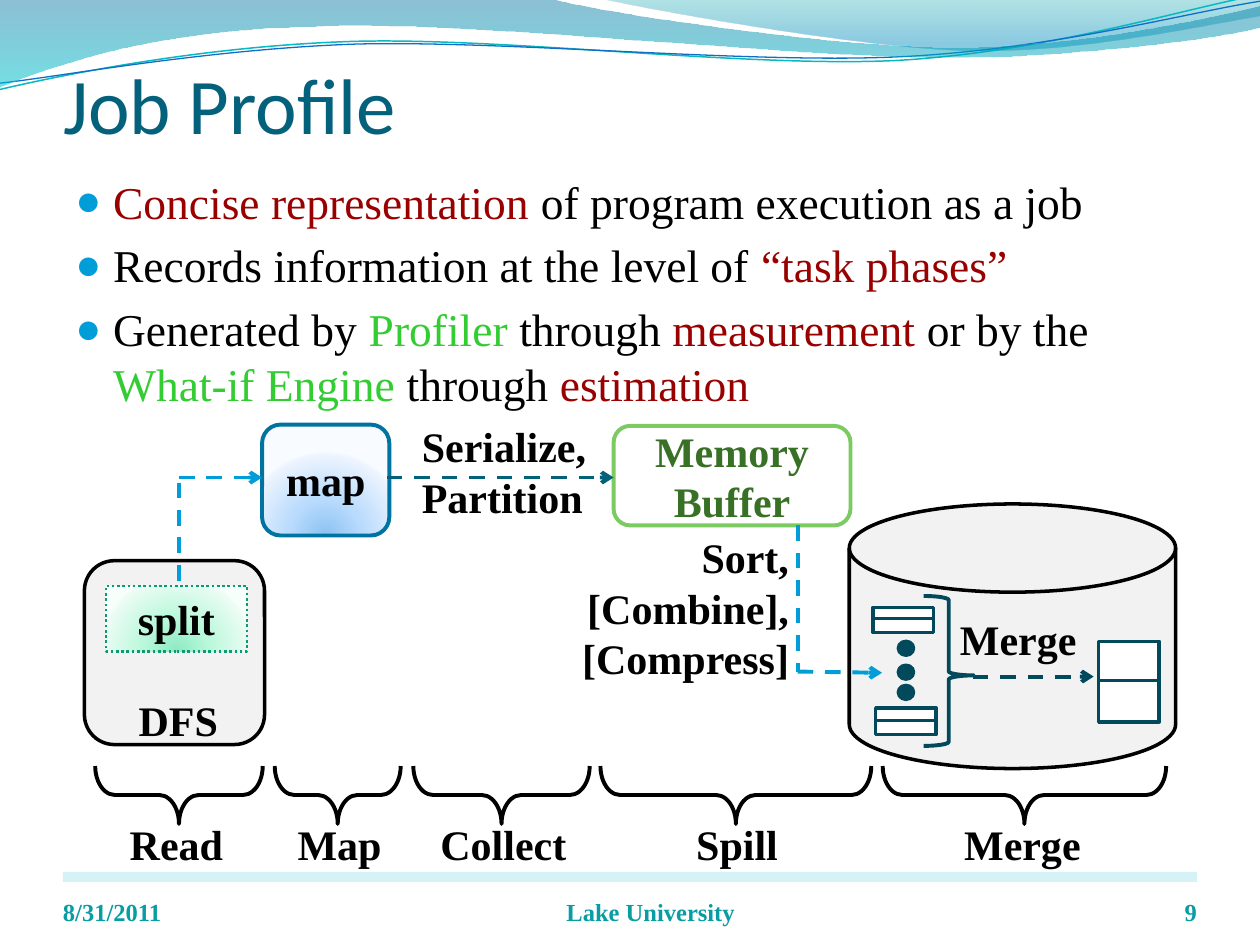
from dataclasses import dataclass
from typing import NamedTuple, Optional
from lxml import etree
from pptx import Presentation
from pptx.dml.color import RGBColor
from pptx.enum import dml, shapes, text
from pptx.oxml.ns import qn
from pptx.util import Inches, Pt

@dataclass(frozen=True)
class Theme:
    serif: str = "Times New Roman"
    sans: str = "Calibri"
    black: str = "000000"
    white: str = "FFFFFF"
    grey: str = "F2F2F2"
    title: str = "04617B"
    bullet: str = "009DD9"
    red: str = "990000"
    green: str = "33CC33"
    footer: str = "089CA3"
    navy: str = "03495C"
    blue: str = "0074A1"
    title_size: float = 45
    body_size: float = 26
    label_size: float = 24
    footer_size: float = 14

class Stroke(NamedTuple):
    color: str
    width: float = 2
    dash: Optional[dml.MSO_LINE] = None

class Label(NamedTuple):
    text: str
    box: tuple
    align: text.PP_ALIGN = text.PP_ALIGN.CENTER

class Arrow(NamedTuple):
    ends: tuple
    color: str
    head: bool = True

class Phase(NamedTuple):
    name: str
    center: float
    span: float
    label_left: float
    label_width: float

class Wave(NamedTuple):
    points: tuple
    kinds: str
    stops: tuple = ()
    stroke: Optional[Stroke] = None

THEME, SHAPE, ALIGN, ANCHOR = Theme(), shapes.MSO_SHAPE, text.PP_ALIGN, text.MSO_ANCHOR
BLUE_GLOW = ((0, "8BC2F1", 100), (43, "B9DBFD", 100), (93, "EAF3FE", 100), (100, "F8FBFF", 100))
GREEN_GLOW = ((0, "8DEAC2", 100), (43, "BAF8DB", 100), (93, "EAFCF3", 100), (100, "F7FFFB", 100))
WAVES = [
    Wave(((4.79, 0), (5.09, 0.07), (6.82, 0.38), (7.69, 0.4), (8.56, 0.42), (9.61, 0.19), (10, 0.13), (10, 0)),
         "CCL", ((0, "00A1A9", 30), (80, "008BBF", 45))),
    Wave(((0, 0.71), (0.47, 0.6), (1.58, 0.37), (2.77, 0.33), (3.96, 0.29), (5.92, 0.54), (7.12, 0.48),
          (8.32, 0.41), (9.39, 0.07), (9.99, -0.04)), "CCC", stroke=Stroke("0AB8BF", 0.85)),
    Wave(((0, 0.66), (0.47, 0.61), (1.64, 0.39), (2.83, 0.35), (4.03, 0.32), (5.97, 0.51), (7.16, 0.45),
          (8.36, 0.39), (9.42, 0.1), (10, 0.01)), "CCC", stroke=Stroke("0F6FC6", 0.75)),
    Wave(((0, 0), (4.4, 0), (4.76, 0.1), (6.64, 0.38), (7.58, 0.38), (8.53, 0.38), (9.58, 0.15), (10, 0.05),
          (10, 0.22), (9.83, 0.27), (8.7, 0.46), (7.46, 0.46), (6.22, 0.46), (3.82, 0.17), (2.57, 0.21),
          (1.29, 0.22), (0.46, 0.51), (0, 0.69)), "LCCLCCC", ((0, "0074A1", 45), (100, "00C6CF", 55))),
]
BULLETS = [
    [("Concise representation ", THEME.red), ("of program execution as a job", THEME.black)],
    [("Records information at the level of ", THEME.black), ("“task phases”", THEME.red)],
    [("Generated by ", THEME.black), ("Profiler", THEME.green), (" through ", THEME.black),
     ("measurement", THEME.red), (" or by the ", THEME.black), ("What-if Engine ", THEME.green),
     ("through ", THEME.black), ("estimation", THEME.red)],
]
FOOTERS = [Label("8/31/2011", (0.5, 6.95, 2.33, 0.4), ALIGN.LEFT),
           Label("Lake University", (3.33, 6.95, 3.67, 0.4)),
           Label("9", (8.67, 6.95, 0.83, 0.4), ALIGN.RIGHT)]
LABELS = [Label("Merge", (7.52, 4.82, 1.29, 0.47), ALIGN.LEFT),
          Label("Sort,\n[Combine],\n[Compress]", (4.17, 4.17, 2.19, 1.22), ALIGN.RIGHT),
          Label("Serialize,\nPartition", (3.25, 3.29, 1.67, 0.85), ALIGN.LEFT),
          Label("DFS", (0.77, 5.46, 1.29, 0.47))]
ARROWS = [Arrow((3.07, 3.79, 4.87, 3.79), THEME.title), Arrow((7.72, 5.37, 8.68, 5.37), THEME.navy),
          Arrow((6.33, 4.17, 6.33, 5.33), THEME.bullet, False), Arrow((6.33, 5.33, 7, 5.34), THEME.bullet),
          Arrow((1.42, 3.83, 1.42, 4.65), THEME.bullet, False), Arrow((1.42, 3.79, 2.08, 3.79), THEME.bullet)]
PHASES = [Phase("Read", 1.42, 1.33, 0.75, 1.3), Phase("Map", 2.68, 1, 2.18, 1.03),
          Phase("Collect", 3.98, 1.4, 3.27, 1.45), Phase("Spill", 5.84, 2.15, 4.92, 1.86),
          Phase("Merge", 8.13, 2.25, 7.08, 2.07)]

def add_node(parent, tag: str, **attributes):
    return etree.SubElement(parent, qn(tag), {key: str(value) for key, value in attributes.items()})

def style_font(font, size: float, color: str, bold: bool = False, name: str = THEME.serif) -> None:
    font.name, font.size, font.bold = name, Pt(size), bold
    font.color.rgb = RGBColor.from_string(color)

def paint(shape, fill=None, stroke: Optional[Stroke] = None, radial: bool = False) -> None:
    shape.shadow.inherit = False
    shape.fill.background()
    if isinstance(fill, str):
        shape.fill.solid()
        shape.fill.fore_color.rgb = RGBColor.from_string(fill)
    elif fill:
        properties = shape._element.spPr
        empty = properties.find(qn("a:noFill"))
        gradient = add_node(properties, "a:gradFill", rotWithShape=1)
        stop_list = add_node(gradient, "a:gsLst")
        for position, color, alpha in fill:
            node = add_node(add_node(stop_list, "a:gs", pos=position * 1000), "a:srgbClr", val=color)
            add_node(node, "a:alpha", val=alpha * 1000)
        if radial:
            circle = add_node(gradient, "a:path", path="circle")
            add_node(circle, "a:fillToRect", l=50000, t=130000, r=50000, b=-30000)
        else:
            add_node(gradient, "a:lin", ang=5400000, scaled=0)
        properties.replace(empty, gradient)
    if not stroke:
        shape.line.fill.background()
        return
    shape.line.color.rgb = RGBColor.from_string(stroke.color)
    shape.line.width = Pt(stroke.width)
    if stroke.dash:
        shape.line.dash_style = stroke.dash

def write(shape, words: str, size: float, color: str, align=ALIGN.CENTER, anchor=ANCHOR.MIDDLE):
    frame = shape.text_frame
    frame.text, frame.word_wrap, frame.vertical_anchor = words, True, anchor
    for paragraph in frame.paragraphs:
        paragraph.alignment = align
        style_font(paragraph.runs[0].font, size, color, True)
    return frame

def add_shape(slide, kind, box: tuple, fill=None, stroke: Optional[Stroke] = None, radial: bool = False):
    shape = slide.shapes.add_shape(kind, *map(Inches, box))
    paint(shape, fill, stroke, radial)
    return shape

def add_label(slide, label: Label, size=THEME.label_size, color=THEME.black, anchor=ANCHOR.TOP):
    return write(slide.shapes.add_textbox(*map(Inches, label.box)), label.text, size, color, label.align, anchor)

def add_arrow(slide, arrow: Arrow) -> None:
    connector = slide.shapes.add_connector(shapes.MSO_CONNECTOR.STRAIGHT, *map(Inches, arrow.ends))
    line = connector.line
    line.color.rgb, line.width = RGBColor.from_string(arrow.color), Pt(2.25)
    line.dash_style = dml.MSO_LINE.DASH
    if arrow.head:
        add_node(line._get_or_add_ln(), "a:tailEnd", type="arrow")
    add_node(connector._element.spPr, "a:effectLst")

def add_brace(slide, box: tuple, color: str, curl: float, tip: float):
    brace = add_shape(slide, SHAPE.RIGHT_BRACE, box, stroke=Stroke(color, 2.25))
    brace.adjustments[0], brace.adjustments[1] = curl, tip
    return brace

def add_wave(slide, wave: Wave) -> None:
    points = [(Inches(x), Inches(y)) for x, y in wave.points]
    builder = slide.shapes.build_freeform(*points[0], scale=1.0)
    builder.add_line_segments(points[1:], close=bool(wave.stops))
    shape = builder.convert_to_shape()
    steps = iter(list(shape._element.iter(qn("a:lnTo"))))
    for kind in wave.kinds:
        first = next(steps)
        if kind == "C":
            first.tag = qn("a:cubicBezTo")
            for step in (next(steps), next(steps)):
                first.append(step[0])
                step.getparent().remove(step)
    paint(shape, wave.stops, wave.stroke)

def add_title(slide) -> None:
    title = slide.shapes.title
    title.left, title.top, title.width, title.height = map(Inches, (0.5, 0.33, 9, 0.92))
    frame = write(title, "Job Profile", THEME.title_size, THEME.title, ALIGN.LEFT)
    frame.margin_left = frame.margin_right = frame.margin_bottom = 0
    style_font(frame.paragraphs[0].runs[0].font, THEME.title_size, THEME.title, name=THEME.sans)

def add_bullets(slide) -> None:
    frame = slide.shapes.add_textbox(*map(Inches, (0.5, 1.33, 9, 2.75))).text_frame
    frame.word_wrap = True
    for index, runs in enumerate(BULLETS):
        paragraph = frame.add_paragraph() if index else frame.paragraphs[0]
        paragraph.space_before = Pt(THEME.body_size * 0.2)
        properties = paragraph._p.get_or_add_pPr()
        properties.set("marL", str(Inches(0.3)))
        properties.set("indent", str(-Inches(0.3)))
        add_node(add_node(properties, "a:buClr"), "a:srgbClr", val=THEME.bullet)
        add_node(properties, "a:buSzPct", val=95000)
        add_node(properties, "a:buFont", typeface=THEME.serif)
        add_node(properties, "a:buChar", char="●")
        for words, color in runs:
            run = paragraph.add_run()
            run.text = words
            style_font(run.font, THEME.body_size, color)

def add_diagram(slide) -> None:
    rounded, outline, edge = SHAPE.ROUNDED_RECTANGLE, Stroke(THEME.navy), Stroke(THEME.black)
    buffer = add_shape(slide, rounded, (4.87, 3.38, 1.88, 0.79), THEME.white, Stroke("7CCA62", 2.25))
    write(buffer, "Memory Buffer", THEME.label_size, "387026")
    add_shape(slide, SHAPE.FLOWCHART_MAGNETIC_DISK, (6.74, 4, 2.59, 2.1), THEME.grey, edge)
    for left, top, height, gap in ((8.72, 5.09, 0.33, 0.31), (6.93, 4.82, 0.11, 0.09), (6.95, 5.62, 0.11, 0.1)):
        for row in range(2):
            add_shape(slide, SHAPE.RECTANGLE, (left, top + row * gap, 0.48, height), THEME.white, outline)
    for top in (5.09, 5.28, 5.44):
        add_shape(slide, SHAPE.OVAL, (7.13, top, 0.12, 0.11), THEME.navy, outline)
    add_brace(slide, (7.33, 4.73, 0.4, 1.19), THEME.navy, 0.08, 0.53)
    mapper = add_shape(slide, rounded, (2.08, 3.37, 1.01, 0.88), BLUE_GLOW, Stroke(THEME.blue, 2.25), True)
    write(mapper, "map", THEME.label_size, THEME.black)
    add_shape(slide, rounded, (0.67, 4.45, 1.43, 1.46), THEME.grey, edge)
    dotted = Stroke("0A9B74", 1.5, dml.MSO_LINE.ROUND_DOT)
    split = add_shape(slide, SHAPE.RECTANGLE, (0.84, 4.65, 1.12, 0.52), GREEN_GLOW, dotted, True)
    write(split, "split", THEME.label_size, THEME.black)
    for arrow in ARROWS:
        add_arrow(slide, arrow)
    for label in LABELS:
        add_label(slide, label)
    for phase in PHASES:
        box = (phase.center - 0.23, 6.31 - phase.span / 2, 0.46, phase.span)
        add_brace(slide, box, THEME.black, 0.34, 0.5).rotation = 90
        add_label(slide, Label(phase.name, (phase.label_left, 6.45, phase.label_width, 0.47)))

def main() -> None:
    presentation = Presentation()
    presentation.slide_width, presentation.slide_height = Inches(10), Inches(7.5)
    slide = presentation.slides.add_slide(presentation.slide_layouts[5])
    add_shape(slide, SHAPE.RECTANGLE, (0.5, 6.92, 9, 0.08), ((0, "B3EAF2", 55), (100, "B3EAF2", 55)))
    for wave in WAVES:
        add_wave(slide, wave)
    add_title(slide)
    add_bullets(slide)
    for footer in FOOTERS:
        frame = add_label(slide, footer, THEME.footer_size, THEME.footer, ANCHOR.BOTTOM)
        frame.margin_left = frame.margin_right = frame.margin_top = frame.margin_bottom = 0
    add_diagram(slide)
    presentation.save("out.pptx")

if __name__ == "__main__":
    main()
